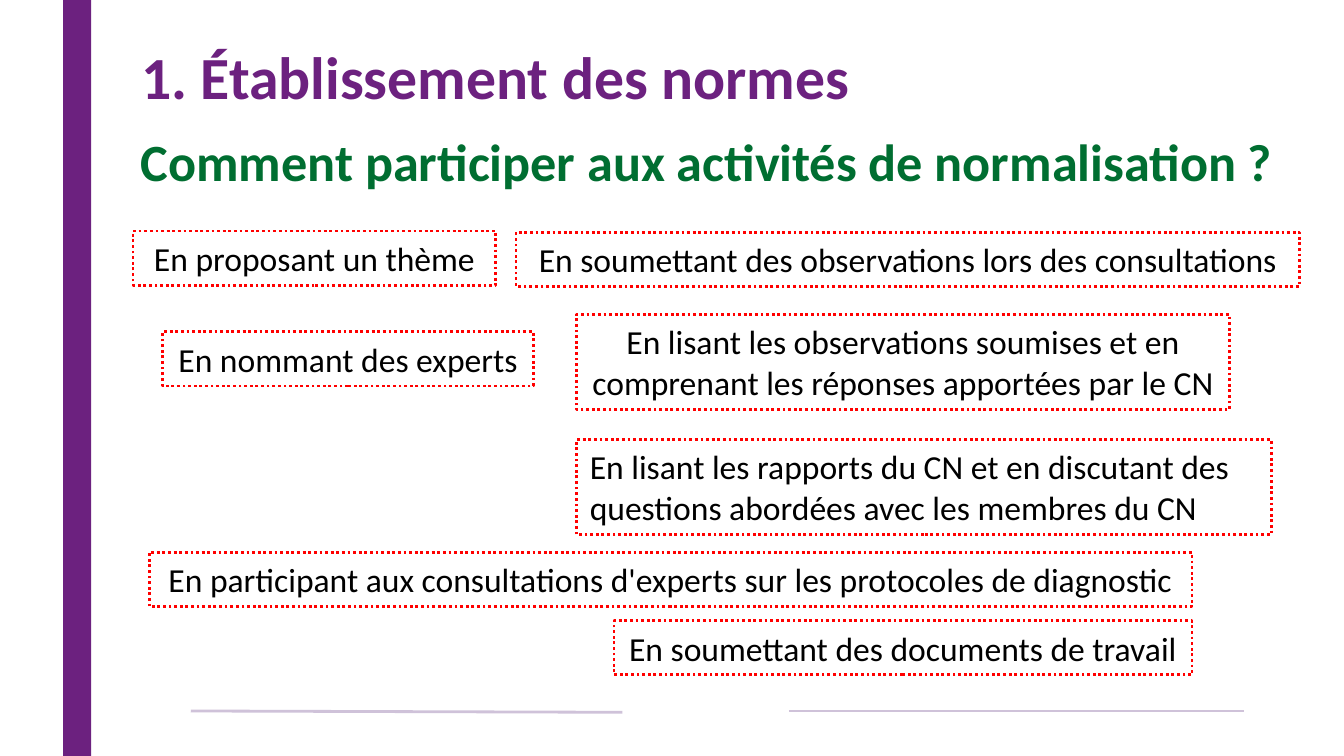
"""Build the slide on ways to take part in standard-setting activities."""
from typing import NamedTuple

from pptx import Presentation
from pptx.dml.color import RGBColor
from pptx.enum.dml import MSO_LINE_DASH_STYLE as Dash
from pptx.enum.shapes import MSO_CONNECTOR as Connector, MSO_SHAPE as Shape
from pptx.enum.text import MSO_ANCHOR as Anchor, PP_ALIGN as Align
from pptx.oxml.ns import qn
from pptx.slide import Slide
from pptx.text.text import TextFrame
from pptx.util import Pt

PURPLE = RGBColor(0x6C, 0x21, 0x7F)
LILAC = RGBColor(0xCF, 0xC2, 0xD9)
GREEN = RGBColor(0x00, 0x6E, 0x31)
RED = RGBColor(0xFF, 0x00, 0x00)
BLACK = RGBColor(0x00, 0x00, 0x00)
FONT = "Calibri"
ONE_LINE, TWO_LINES = 29, 51


class Activity(NamedTuple):
    text: str
    left: float
    top: float
    width: float
    height: float = ONE_LINE
    align: Align = Align.CENTER


class Rule(NamedTuple):
    x1: float
    y1: float
    x2: float
    y2: float


ACTIVITIES = [
    Activity("En proposant un thème", 71.3, 123.8, 194.4),
    Activity("En soumettant des observations lors des consultations", 276.5, 124.5, 419.8),
    Activity("En nommant des experts", 87.1, 177.8, 198.7),
    Activity("En lisant les observations soumises et en comprenant les réponses "
             "apportées par le CN", 308.9, 168.5, 349.9, TWO_LINES),
    Activity("En lisant les rapports du CN et en discutant des questions abordées "
             "avec les membres du CN", 308.9, 235.5, 372.2, TWO_LINES, Align.LEFT),
    Activity("En participant aux consultations d'experts sur les protocoles de diagnostic",
             79.9, 296, 558.7),
    Activity("En soumettant des documents de travail", 329, 332.6, 309.6),
]
RULES = [Rule(333.4, 381.6, 102.2, 380.9), Rule(422.6, 380.9, 666.7, 380.9)]


def write(tf: TextFrame, text: str, size: float, color: RGBColor,
          bold: bool = False, align: Align = Align.LEFT) -> None:
    tf.word_wrap = True
    tf.text = text
    p = tf.paragraphs[0]
    p.alignment = align
    font = p.runs[0].font
    font.name, font.size, font.bold = FONT, Pt(size), bold
    font.color.rgb = color


def add_activity(s: Slide, a: Activity) -> None:
    sp = s.shapes.add_shape(Shape.RECTANGLE, Pt(a.left), Pt(a.top), Pt(a.width), Pt(a.height))
    sp.shadow.inherit = False
    sp.fill.background()
    sp.line.color.rgb = RED
    sp.line.width = Pt(1.5)
    sp.line.dash_style = Dash.ROUND_DOT
    sp.text_frame.vertical_anchor = Anchor.TOP
    write(sp.text_frame, a.text, 18, BLACK, align=a.align)


def add_rule(s: Slide, rule: Rule) -> None:
    line = s.shapes.add_connector(Connector.STRAIGHT, *map(Pt, rule))
    line.line.color.rgb = LILAC
    line.line.width = Pt(1.5)
    props = line._element.spPr
    props.append(props.makeelement(qn("a:effectLst"), {}))


def add_band(s: Slide) -> None:
    sp = s.shapes.add_shape(Shape.RECTANGLE, Pt(33.8), 0, Pt(15.1), Pt(405))
    sp.shadow.inherit = False
    sp.fill.solid()
    sp.fill.fore_color.rgb = PURPLE
    sp.line.fill.background()


def add_headings(s: Slide) -> None:
    title = s.shapes.title
    title.left, title.top, title.width, title.height = map(Pt, (68.4, 14.4, 598.3, 56.9))
    title.text_frame.vertical_anchor = Anchor.MIDDLE
    write(title.text_frame, "1. Établissement des normes", 32, PURPLE, bold=True)
    title.text_frame.paragraphs[0].line_spacing = 0.9
    sp = s.shapes.add_textbox(Pt(68.4), Pt(65.5), Pt(635.8), Pt(41))
    write(sp.text_frame, "Comment participer aux activités de normalisation ?",
          28, GREEN, bold=True)


def main() -> None:
    prs = Presentation()
    prs.slide_width, prs.slide_height = Pt(720), Pt(405)
    s = prs.slides.add_slide(prs.slide_layouts[5])
    add_band(s)
    for rule in RULES:
        add_rule(s, rule)
    add_headings(s)
    for activity in ACTIVITIES:
        add_activity(s, activity)
    prs.save("out.pptx")


if __name__ == "__main__":
    main()
